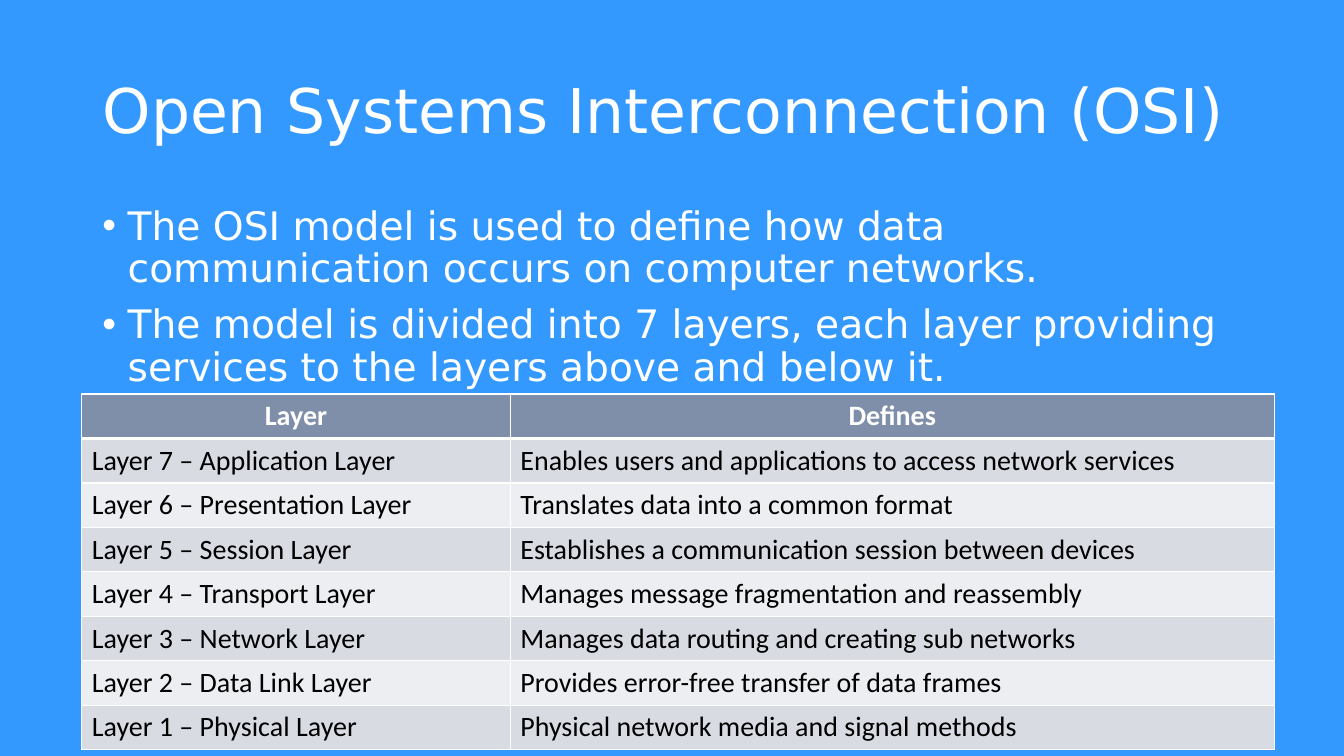
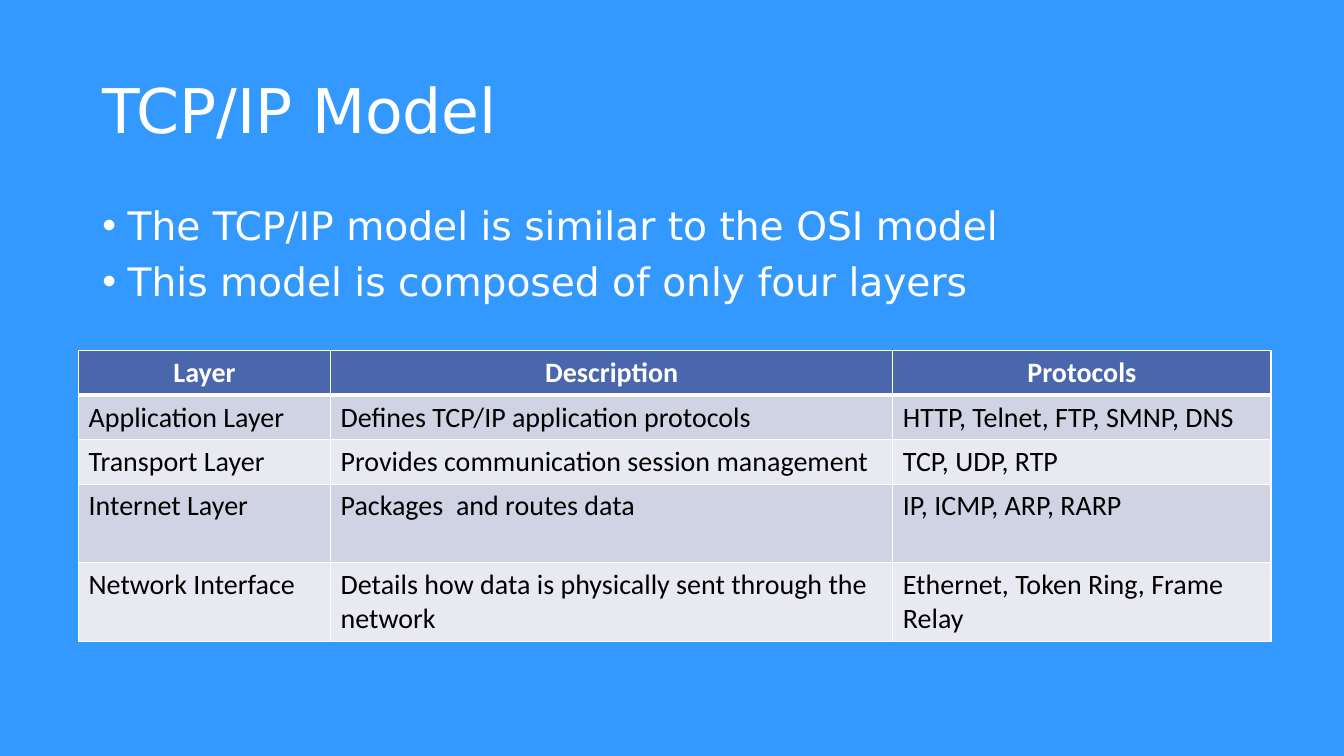
from lxml.etree import SubElement
from pptx import Presentation
from pptx.dml.color import RGBColor
from pptx.enum.text import MSO_ANCHOR as Anchor, MSO_AUTO_SIZE as AutoSize, PP_ALIGN as Align
from pptx.oxml import parse_xml
from pptx.oxml.ns import nsdecls, qn
from pptx.util import Cm, Pt


def rgb(value):
    return RGBColor.from_string(value)


class Deck:
    BLUE, WHITE, BLACK = "3399FF", "FFFFFF", "000000"
    TEXT_FONT, TABLE_FONT = "DejaVu Sans", "Calibri"
    LEFT, WIDTH = Cm(2.33), Cm(29.21)
    INDENT = Cm(0.64)
    ROW = 1.12

    def __init__(self):
        self.prs = Presentation()
        self.prs.slide_width, self.prs.slide_height = Cm(33.87), Cm(19.05)
        fill = self.prs.slide_master.background.fill
        fill.solid()
        fill.fore_color.rgb = rgb(self.BLUE)
        self.s = None

    def style(self, p, font, size, color, bold=False):
        for r in p.runs:
            r.font.name = font
            r.font.size = Pt(size)
            r.font.bold = bold
            r.font.color.rgb = rgb(color)

    def place(self, sp, top, height):
        sp.left, sp.top, sp.width, sp.height = self.LEFT, Cm(top), self.WIDTH, Cm(height)

    def slide(self, title):
        self.s = self.prs.slides.add_slide(self.prs.slide_layouts.get_by_name("Title Only"))
        sp = self.s.shapes.title
        self.place(sp, 1.01, 3.68)
        tf = sp.text_frame
        tf.text = title
        tf.auto_size = AutoSize.NONE
        tf.vertical_anchor = Anchor.MIDDLE
        p = tf.paragraphs[0]
        p.alignment = Align.LEFT
        p.line_spacing = 0.9
        self.style(p, self.TEXT_FONT, 44, self.WHITE)

    def bullets(self, lines):
        sp = self.s.shapes.add_textbox(0, 0, 0, 0)
        self.place(sp, 5.07, 12.09)
        tf = sp.text_frame
        tf.word_wrap = True
        tf.text = "\n".join(lines)
        for p in tf.paragraphs:
            p.line_spacing = 0.9
            p.space_before = Pt(10)
            self.style(p, self.TEXT_FONT, 28, self.WHITE)
            pPr = p._p.get_or_add_pPr()
            pPr.set("marL", str(self.INDENT))
            pPr.set("indent", str(-self.INDENT))
            SubElement(pPr, qn("a:buFont"), typeface="Arial")
            SubElement(pPr, qn("a:buChar"), char="•")

    def borders(self, cell, top, bottom):
        tcPr = cell._tc.get_or_add_tcPr()
        for side, width in (("L", 1), ("R", 1), ("T", top), ("B", bottom)):
            tcPr.append(parse_xml(
                f'<a:ln{side} {nsdecls("a")} w="{Pt(width)}"><a:solidFill>'
                f'<a:srgbClr val="{self.WHITE}"/></a:solidFill></a:ln{side}>'))

    def table(self, left, top, widths, rows, header, bands, tall=()):
        heights = [1.98 if i in tall else self.ROW for i in range(len(rows))]
        frame = self.s.shapes.add_table(len(rows), len(widths), Cm(left), Cm(top),
                                        Cm(sum(widths)), Cm(sum(heights)))
        table = frame.table
        for column, width in zip(table.columns, widths):
            column.width = Cm(width)
        for i, texts in enumerate(rows):
            table.rows[i].height = Cm(heights[i])
            is_head = i == 0
            for cell, text in zip(table.rows[i].cells, texts):
                self.borders(cell, 3 if i == 1 else 1, 3 if is_head else 1)
                cell.fill.solid()
                cell.fill.fore_color.rgb = rgb(header if is_head else bands[(i - 1) % 2])
                cell.text_frame.text = text
                p = cell.text_frame.paragraphs[0]
                p.alignment = Align.CENTER if is_head else Align.LEFT
                self.style(p, self.TABLE_FONT, 20, self.WHITE if is_head else self.BLACK, is_head)


OSI_LAYERS = [
    ("Application", "Enables users and applications to access network services"),
    ("Presentation", "Translates data into a common format"),
    ("Session", "Establishes a communication session between devices"),
    ("Transport", "Manages message fragmentation and reassembly"),
    ("Network", "Manages data routing and creating sub networks"),
    ("Data Link", "Provides error-free transfer of data frames"),
    ("Physical", "Physical network media and signal methods"),
]

TCP_IP_ROWS = [
    ("Layer", "Description", "Protocols"),
    ("Application Layer", "Defines TCP/IP application protocols", "HTTP, Telnet, FTP, SMNP, DNS"),
    ("Transport Layer", "Provides communication session management", "TCP, UDP, RTP"),
    ("Internet Layer", "Packages  and routes data", "IP, ICMP, ARP, RARP"),
    ("Network Interface", "Details how data is physically sent through the network",
     "Ethernet, Token Ring, Frame Relay"),
]


def main():
    deck = Deck()

    deck.slide("Open Systems Interconnection (OSI)")
    deck.bullets([
        "The OSI model is used to define how data communication occurs on computer networks.",
        "The model is divided into 7 layers, each layer providing services to the layers above and below it.",
    ])
    osi_rows = [("Layer", "Defines")] + [
        (f"Layer {7 - i} – {name} Layer", role) for i, (name, role) in enumerate(OSI_LAYERS)]
    deck.table(2.06, 9.93, (10.8, 19.25), osi_rows, "7F8FA9", ("D8DBE2", "ECEEF1"))

    deck.slide("TCP/IP Model")
    deck.bullets([
        "The TCP/IP model is similar to the OSI model",
        "This model is composed of only four layers",
    ])
    deck.table(1.98, 8.84, (6.35, 14.17, 9.53), TCP_IP_ROWS, "4A66AC", ("D0D3E3", "E9EAF1"), tall=(3, 4))

    deck.prs.save("out.pptx")


if __name__ == "__main__":
    main()
